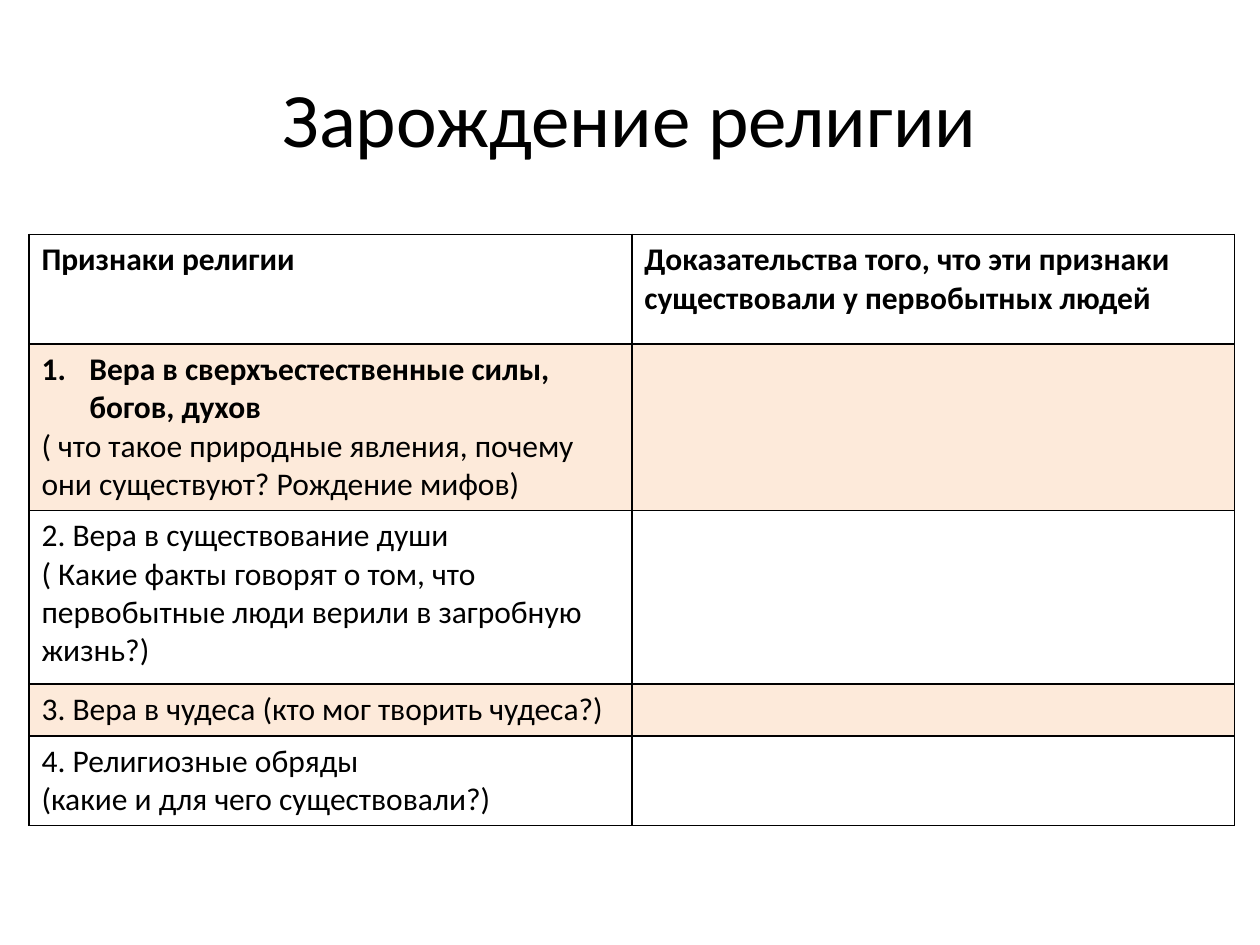
from lxml.etree import SubElement
from pptx import Presentation
from pptx.dml.color import RGBColor
from pptx.enum.text import MSO_ANCHOR, PP_ALIGN
from pptx.oxml.ns import qn
from pptx.util import Inches, Pt

BLACK = RGBColor(0x00, 0x00, 0x00)
ORANGE = RGBColor(0xF7, 0x96, 0x46)

HEADER = [
    [("Признаки религии", True, False)],
    [("Доказательства того, что эти признаки существовали у первобытных людей", True, False)],
]
SIGNS = [
    [
        ("Вера в сверхъестественные силы, богов, духов", True, True),
        ("( что такое природные явления, почему они существуют? Рождение мифов)", False, False),
    ],
    [("2. Вера в существование души\v( Какие факты говорят о том, что первобытные люди "
      "верили в загробную жизнь?)", False, False)],
    [("3. Вера в чудеса (кто мог творить чудеса?)", False, False)],
    [
        ("4. Религиозные обряды", False, False),
        ("(какие и для чего существовали?)", False, False),
    ],
]
ROWS = [HEADER] + [[sign, []] for sign in SIGNS]
ROW_HEIGHTS = [0.87, 1.32, 1.38, 0.41, 0.71]
COL_WIDTH = 4.785


class SlideBuilder:
    font = "Calibri"
    title_size = 44
    text_size = 18

    def __init__(self, prs):
        self.s = prs.slides.add_slide(prs.slide_layouts[5])

    def run(self, p, text, size, bold=False):
        for i, line in enumerate(text.split("\v")):
            if i:
                p.add_line_break()
            r = p.add_run()
            r.text = line
            r.font.name = self.font
            r.font.size = Pt(size)
            r.font.bold = bold
            r.font.color.rgb = BLACK

    def title(self, text, left, top, width, height):
        sp = self.s.shapes.title
        sp.left, sp.top = Inches(left), Inches(top)
        sp.width, sp.height = Inches(width), Inches(height)
        tf = sp.text_frame
        tf.vertical_anchor = MSO_ANCHOR.MIDDLE
        p = tf.paragraphs[0]
        p.alignment = PP_ALIGN.CENTER
        self.run(p, text, self.title_size)

    def number(self, p):
        pPr = p._p.get_or_add_pPr()
        pPr.set("marL", str(Inches(0.38)))
        pPr.set("indent", str(-Inches(0.38)))
        SubElement(pPr, qn("a:buFont"), typeface="+mj-lt")
        SubElement(pPr, qn("a:buAutoNum"), type="arabicPeriod")

    def borders(self, cell):
        tcPr = cell._tc.get_or_add_tcPr()
        for side in ("lnL", "lnR", "lnT", "lnB"):
            ln = SubElement(tcPr, qn(f"a:{side}"), w=str(Pt(1)))
            fill = SubElement(ln, qn("a:solidFill"))
            SubElement(fill, qn("a:srgbClr"), val=str(BLACK))

    def shade(self, cell, shaded):
        if not shaded:
            cell.fill.background()
            return
        cell.fill.solid()
        cell.fill.fore_color.rgb = ORANGE
        clr = cell._tc.tcPr.find(qn("a:solidFill")).find(qn("a:srgbClr"))
        SubElement(clr, qn("a:alpha"), val="20000")

    def cell(self, cell, paragraphs, shaded):
        self.borders(cell)
        self.shade(cell, shaded)
        tf = cell.text_frame
        for i, (text, bold, numbered) in enumerate(paragraphs):
            p = tf.add_paragraph() if i else tf.paragraphs[0]
            if numbered:
                self.number(p)
            self.run(p, text, self.text_size, bold)

    def table(self, rows, left, top, col_width, heights):
        cols = len(rows[0])
        tbl = self.s.shapes.add_table(
            len(rows), cols, Inches(left), Inches(top),
            Inches(col_width * cols), Inches(sum(heights))).table
        tbl.first_row = False
        tbl.horz_banding = False
        for col in tbl.columns:
            col.width = Inches(col_width)
        for i, (row, height) in enumerate(zip(rows, heights)):
            tbl.rows[i].height = Inches(height)
            for j, paragraphs in enumerate(row):
                self.cell(tbl.cell(i, j), paragraphs, i % 2 == 1)


def main():
    prs = Presentation()
    prs.slide_width, prs.slide_height = Inches(10), Inches(7.5)
    slide = SlideBuilder(prs)
    slide.title("Зарождение религии", 0.5, 0.3, 9, 1.25)
    slide.table(ROWS, 0.23, 1.86, COL_WIDTH, ROW_HEIGHTS)
    prs.save("out.pptx")


if __name__ == "__main__":
    main()
